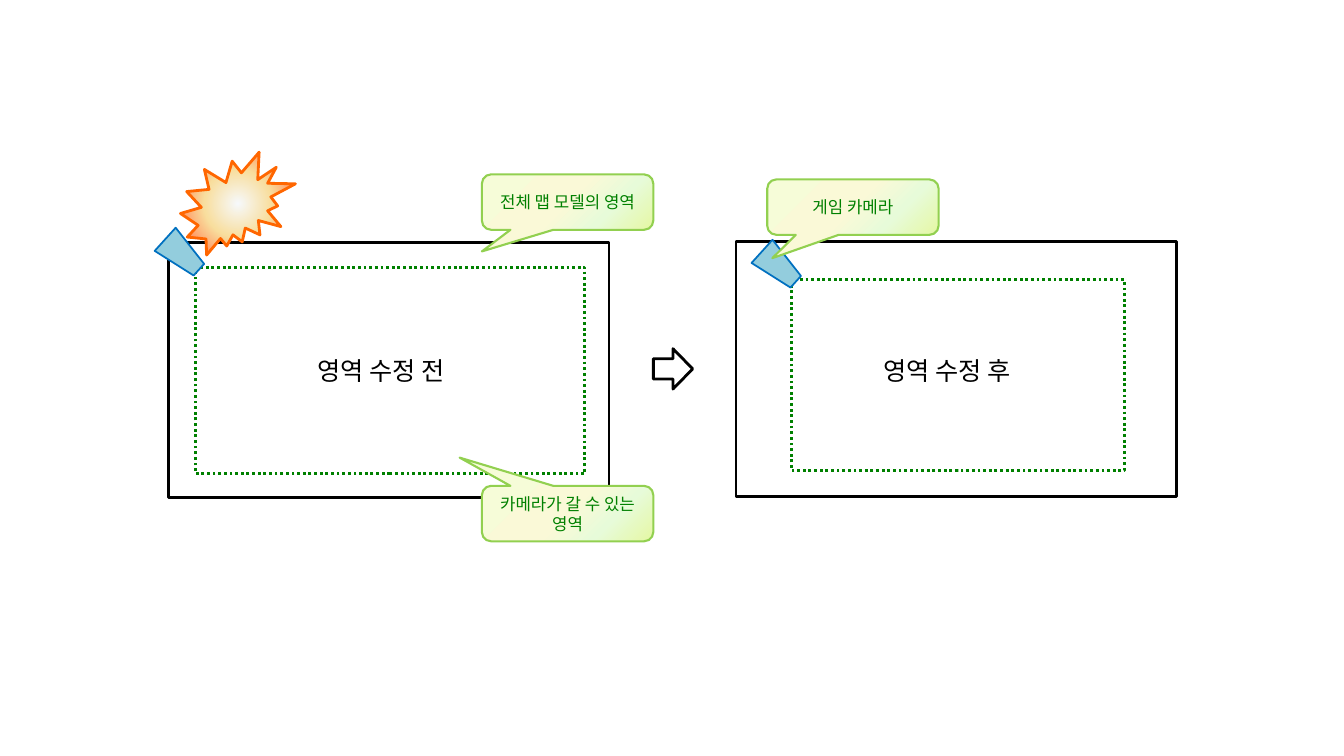
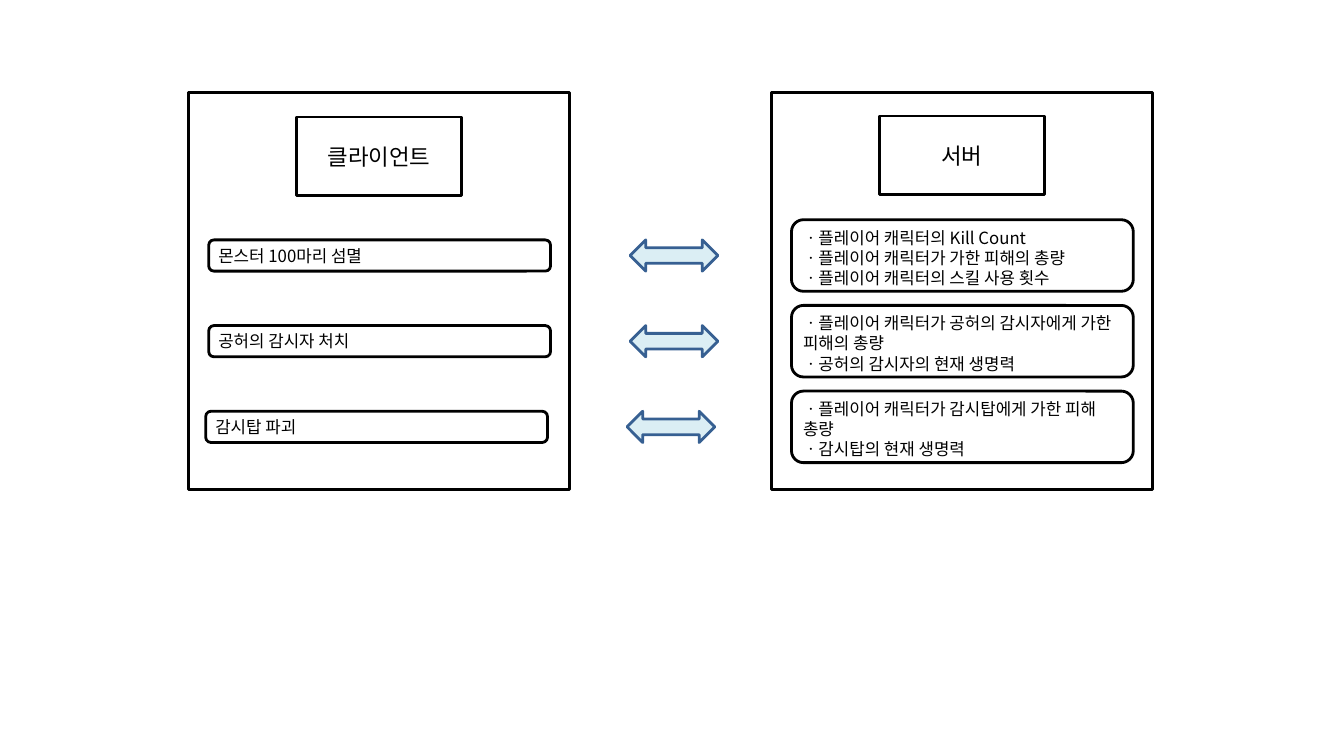
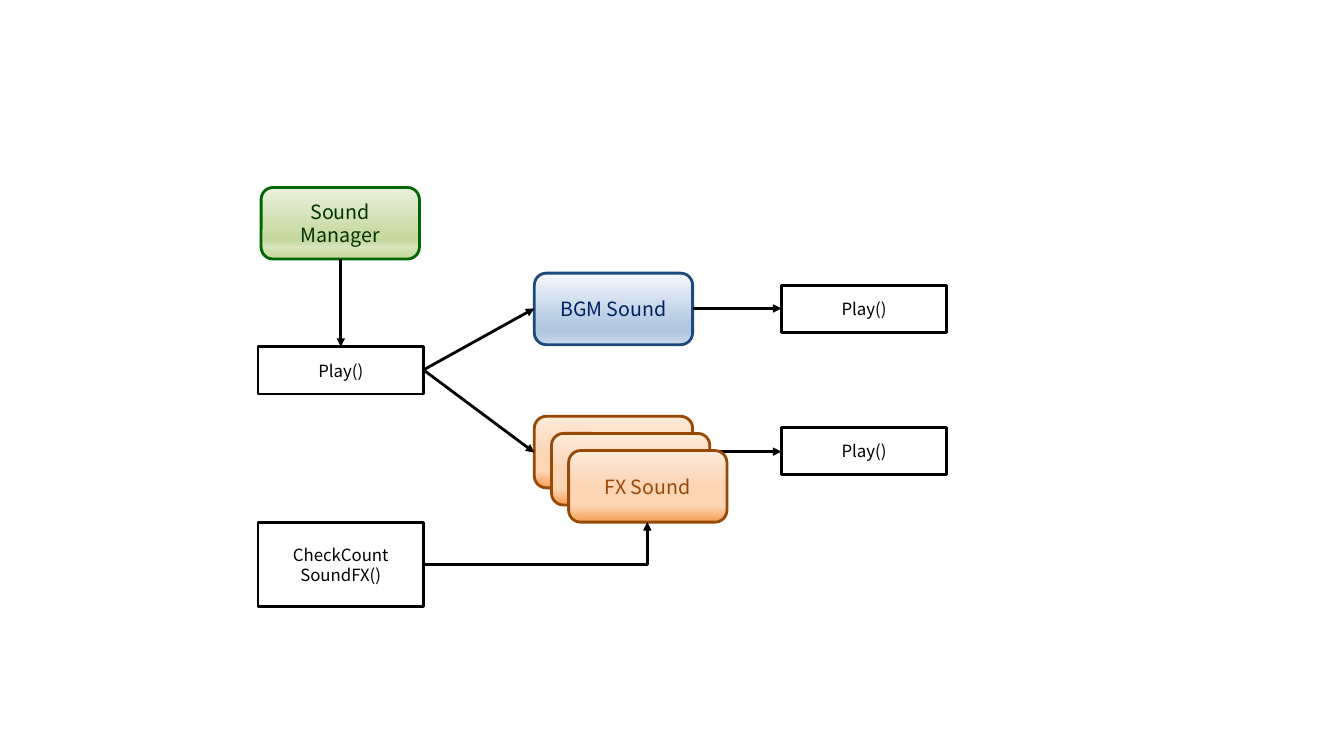
"""Build three diagrams: camera area, quest exchange and sound manager."""
from lxml.etree import SubElement
from pptx import Presentation
from pptx.dml.color import RGBColor
from pptx.enum.dml import MSO_LINE_DASH_STYLE as Dash
from pptx.enum.shapes import MSO_CONNECTOR as Link, MSO_SHAPE as Shape
from pptx.enum.text import MSO_ANCHOR as Anchor, MSO_AUTO_SIZE as AutoSize, PP_ALIGN as Align
from pptx.oxml.ns import qn
from pptx.util import Inches, Pt

FONT = "Noto Sans CJK KR"
COLORS = {
    "black": "000000", "green": "008000", "lime": "92D050",
    "camera": "93CDDD", "camera_line": "0070C0", "burst_line": "FF6600",
    "arrow": "DBEEF4", "arrow_line": "376092",
    "manager_line": "006600", "manager_text": "003300",
    "music_line": "1F497D", "music_text": "002060", "effect": "984807",
}
GRADIENTS = {
    "burst": ([(0, "F6F9FC"), (44, "F8DE9E"), (74, "FF9966"), (100, "FFCC00")], (50, 50, 50, 50)),
    "callout": ([(0, "F6FCD8"), (49, "FAF9D7"), (73, "E7FBD9"), (100, "E5F7A3")], (0, 0, 100, 100)),
    "manager": ([(0, "EBF1DE"), (74, "C3D69B"), (83, "D7E4BD"), (100, "C3D69B")], None),
    "music": ([(0, "F6F9FC"), (74, "B0C6E1"), (83, "B0C6E1"), (100, "CAD9EB")], None),
    "effect_fill": ([(0, "FDEADA"), (50, "FCD5B5"), (77, "FCD5B5"), (100, "F89D52")], None),
}


class Diagram:
    def __init__(self):
        self.deck = Presentation()
        self.deck.slide_width = Inches(13.33)
        self.deck.slide_height = Inches(7.5)
        self.page = None

    def new_page(self):
        self.page = self.deck.slides.add_slide(self.deck.slide_layouts[6])

    def color(self, name):
        return RGBColor.from_string(COLORS[name])

    def gradient(self, box, name):
        stops, focus = GRADIENTS[name]
        box.fill.gradient()
        grad = box._element.spPr.find(qn("a:gradFill"))
        grad.clear()
        stop_list = SubElement(grad, qn("a:gsLst"))
        for position, value in stops:
            stop = SubElement(stop_list, qn("a:gs"), pos=str(position * 1000))
            SubElement(stop, qn("a:srgbClr"), val=value)
        if focus:
            radial = SubElement(grad, qn("a:path"), {"path": "circle"})
            edges = {side: str(share * 1000) for side, share in zip("ltrb", focus)}
            SubElement(radial, qn("a:fillToRect"), edges)
        else:
            SubElement(grad, qn("a:lin"), ang="5400000", scaled="0")

    def set_text(self, box, text, size, color, align):
        box.text_frame.text = text
        for para in box.text_frame.paragraphs:
            para.alignment = align
            for span in para.runs:
                span.font.size = Pt(size)
                span.font.color.rgb = self.color(color)
                span.font.name = FONT
                SubElement(span.font._element, qn("a:ea"), typeface=FONT)

    def shape(self, kind, left, top, width, height, fill=None, line="black", weight=2,
              text="", size=12, color="black", align=Align.CENTER):
        box = self.page.shapes.add_shape(
            kind, Inches(left), Inches(top), Inches(width), Inches(height))
        box.shadow.inherit = False
        if fill in GRADIENTS:
            self.gradient(box, fill)
        elif fill:
            box.fill.solid()
            box.fill.fore_color.rgb = self.color(fill)
        else:
            box.fill.background()
        box.line.color.rgb = self.color(line)
        box.line.width = Pt(weight)
        if text:
            self.set_text(box, text, size, color, align)
        return box

    def insets(self, box, side, edge):
        frame = box.text_frame
        frame.margin_left = frame.margin_right = Inches(side)
        frame.margin_top = frame.margin_bottom = Inches(edge)

    def dotted_area(self, left, top, width, height):
        area = self.shape(Shape.RECTANGLE, left, top, width, height, line="green")
        area.line.dash_style = Dash.ROUND_DOT

    def camera(self, left, top):
        camera = self.shape(Shape.TRAPEZOID, left, top, 0.31, 0.45, "camera", "camera_line", 1.25)
        camera.rotation = 132.1

    def callout(self, left, top, text, tip):
        box = self.shape(Shape.ROUNDED_RECTANGULAR_CALLOUT, left, top, 1.7, 0.55,
                         "callout", "lime", 1.5, text, color="green")
        box.adjustments[0], box.adjustments[1] = tip
        self.insets(box, 0.04, 0.04)

    def label(self, left, top, text):
        box = self.page.shapes.add_textbox(Inches(left), Inches(top), Inches(1.64), Inches(0.4))
        self.set_text(box, text, 18, "black", Align.LEFT)
        box.text_frame.word_wrap = False
        box.text_frame.auto_size = AutoSize.SHAPE_TO_FIT_TEXT

    def note(self, left, top, height, text):
        box = self.shape(Shape.ROUNDED_RECTANGLE, left, top, 3.39, height,
                         text=text, align=Align.LEFT)
        box.text_frame.vertical_anchor = Anchor.TOP
        self.insets(box, 0.08, 0.04)

    def node(self, left, top, fill, line, text="", color="black"):
        self.shape(Shape.ROUNDED_RECTANGLE, left, top, 1.57, 0.71, fill, line,
                   text=text, size=14, color=color)

    def call(self, left, top, text="Play()", height=0.47):
        self.shape(Shape.RECTANGLE, left, top, 1.64, height, text=text)

    def arrow(self, start, end, bent=False):
        points = [Inches(value) for value in (*start, *end)]
        link = self.page.shapes.add_connector(Link.ELBOW if bent else Link.STRAIGHT, *points)
        link.line.color.rgb = self.color("black")
        link.line.width = Pt(2)
        properties = link._element.spPr
        SubElement(properties.find(qn("a:ln")), qn("a:tailEnd"), type="triangle")
        SubElement(properties, qn("a:effectLst"))
        if bent:
            properties.find(qn("a:prstGeom")).set("prst", "bentConnector2")


def camera_page(art):
    art.new_page()
    for left, top in ((1.67, 2.41), (7.3, 2.4)):
        art.shape(Shape.RECTANGLE, left, top, 4.37, 2.53)
    art.dotted_area(1.94, 2.65, 3.86, 2.05)
    art.camera(1.65, 2.3)
    art.dotted_area(7.85, 2.77, 3.3, 1.9)
    art.camera(7.57, 2.42)
    art.shape(Shape.RIGHT_ARROW, 6.48, 3.46, 0.39, 0.4)
    art.shape(Shape.EXPLOSION2, 1.79, 1.51, 1.14, 1.02, "burst", "burst_line")
    art.callout(4.78, 1.73, "전체 맵 모델의 영역", (-0.5, 0.89))
    art.callout(4.78, 4.82, "카메라가 갈 수 있는 영역", (-0.63, -1.01))
    art.callout(7.61, 1.78, "게임 카메라", (-0.47, 0.92))
    art.label(3.05, 3.48, "영역 수정 전")
    art.label(8.66, 3.48, "영역 수정 후")


def quest_page(art):
    art.new_page()
    for left, top, title in ((1.87, 1.16, "클라이언트"), (7.65, 1.15, "서버")):
        art.shape(Shape.RECTANGLE, left, 0.92, 3.78, 3.94)
        art.shape(Shape.RECTANGLE, left + 1.07, top, 1.64, 0.78, text=title, size=16)
    quests = (
        (0, "몬스터 100마리 섬멸",
         "ㆍ플레이어 캐릭터의 Kill Count\nㆍ플레이어 캐릭터가 가한 피해의 총량\n"
         "ㆍ플레이어 캐릭터의 스킬 사용 횟수"),
        (0, "공허의 감시자 처치",
         "ㆍ플레이어 캐릭터가 공허의 감시자에게 가한 피해의 총량\nㆍ공허의 감시자의 현재 생명력"),
        (-0.03, "감시탑 파괴",
         "ㆍ플레이어 캐릭터가 감시탑에게 가한 피해 총량\nㆍ감시탑의 현재 생명력"),
    )
    for row, (shift, quest, records) in enumerate(quests):
        drop = row * 0.85
        art.note(2.07 + shift, 2.38 + drop, 0.31, quest)
        art.note(7.85, 2.18 + drop, 0.71, records)
        art.shape(Shape.LEFT_RIGHT_ARROW, 6.25 + shift, 2.38 + drop, 0.87, 0.31,
                  "arrow", "arrow_line")


def sound_page(art):
    art.new_page()
    art.arrow((7.06, 4.48), (7.75, 4.48))
    art.node(2.59, 1.86, "manager", "manager_line", "Sound\nManager", "manager_text")
    art.node(5.3, 2.71, "music", "music_line", "BGM Sound", "music_text")
    for layer, text in enumerate(("", "", "FX Sound")):
        offset = layer * 0.17
        art.node(5.3 + offset, 4.13 + offset, "effect_fill", "effect", text, "effect")
    for left, top in ((2.56, 3.44), (7.75, 2.83), (7.75, 4.24)):
        art.call(left, top)
    art.call(2.56, 5.18, "CheckCount\nSoundFX()", 0.84)
    art.arrow((3.38, 2.57), (3.38, 3.44))
    for target in (3.06, 4.49):
        art.arrow((4.2, 3.67), (5.3, target))
    art.arrow((6.87, 3.06), (7.75, 3.06))
    art.arrow((4.2, 5.6), (6.42, 5.18), bent=True)


def main():
    art = Diagram()
    camera_page(art)
    quest_page(art)
    sound_page(art)
    art.deck.save("out.pptx")


if __name__ == "__main__":
    main()
